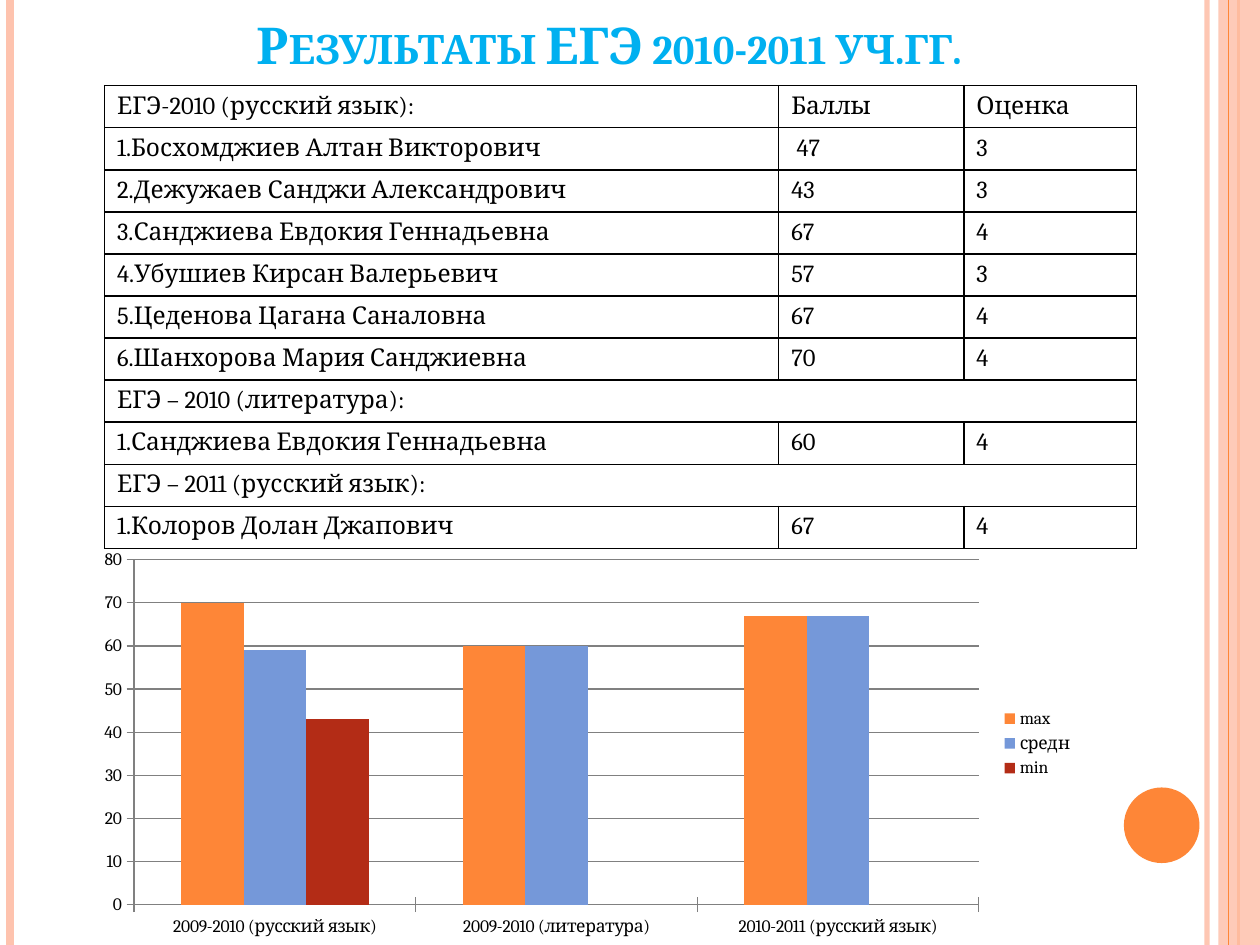
from lxml import etree
from pptx import Presentation, util as u
from pptx.chart.data import CategoryChartData
from pptx.dml.color import RGBColor
from pptx.enum import chart as ch, shapes, text
from pptx.oxml.ns import qn

Inches, Pt = u.Inches, u.Pt
FONT = "Cambria"
COLORS = {
    "orange": "FE8637", "peach": "FEC3AE", "blue": "7598D9", "red": "B32C16",
    "title": "00B0F0", "black": "000000", "grid": "808080",
}
RESULTS = [
    ("ЕГЭ-2010 (русский язык):", "Баллы", "Оценка"),
    ("1.Босхомджиев Алтан Викторович", " 47", "3"),
    ("2.Дежужаев Санджи Александрович", "43", "3"),
    ("3.Санджиева Евдокия Геннадьевна", "67", "4"),
    ("4.Убушиев Кирсан Валерьевич", "57", "3"),
    ("5.Цеденова Цагана Саналовна", "67", "4"),
    ("6.Шанхорова Мария Санджиевна", "70", "4"),
    ("ЕГЭ – 2010 (литература):",),
    ("1.Санджиева Евдокия Геннадьевна", "60", "4"),
    ("ЕГЭ – 2011 (русский язык):",),
    ("1.Колоров Долан Джапович", "67", "4"),
]
CATEGORIES = ["2009-2010 (русский язык)", "2009-2010 (литература)",
              "2010-2011 (русский язык)"]
SERIES = [
    ("max", (70, 60, 67), "orange"),
    ("средн", (59, 60, 67), "blue"),
    ("min", (43, None, None), "red"),
]


def rgb(name):
    return RGBColor.from_string(COLORS[name])


def style_font(font, size, color="black"):
    font.name, font.size = FONT, Pt(size)
    font.color.rgb = rgb(color)


def set_opacity(sp, percent):
    """Apply opacity to the first solid colour of a shape or line."""
    color = sp._element.spPr.find(".//" + qn("a:srgbClr"))
    etree.SubElement(color, qn("a:alpha"), val=str(percent * 1000))


def add_stripe(s, x, top, height, color, width, opacity=100):
    line = s.shapes.add_connector(shapes.MSO_CONNECTOR.STRAIGHT,
                                  x, top, x, top + height)
    line.line.color.rgb = rgb(color)
    line.line.width = Pt(width)
    if opacity < 100:
        set_opacity(line, opacity)
    etree.SubElement(line._element.spPr, qn("a:effectLst"))


def add_filled(s, kind, left, top, width, height, color):
    sp = s.shapes.add_shape(kind, left, top, width, height)
    sp.shadow.inherit = False
    sp.fill.solid()
    sp.fill.fore_color.rgb = rgb(color)
    sp.line.fill.background()
    return sp


def add_decoration(s, left, top, width, height):
    right = left + width
    add_stripe(s, right - Inches(0.42), top, height, "peach", 3, 93)
    add_stripe(s, left + Inches(0.08), top, height, "peach", 4.5)
    add_stripe(s, right - Inches(0.17), top, height, "orange", 1.5)
    band = add_filled(s, shapes.MSO_SHAPE.RECTANGLE, right - Inches(0.33), top,
                      Inches(0.33), height, "peach")
    set_opacity(band, 87)
    add_stripe(s, right - Inches(0.25), top, height, "orange", 0.75)
    add_filled(s, shapes.MSO_SHAPE.OVAL, right - Inches(1.08),
               top + height - Inches(1.25), Inches(0.6), Inches(0.6), "orange")


def add_title(s, left, top, width, height):
    tf = s.shapes.add_textbox(left, top, width, height).text_frame
    tf.word_wrap = True
    tf.vertical_anchor = text.MSO_ANCHOR.BOTTOM
    p = tf.paragraphs[0]
    p.alignment = text.PP_ALIGN.CENTER
    r = p.add_run()
    r.text = "Результаты ЕГЭ 2010-2011 уч.гг."
    style_font(r.font, 29, "title")
    r.font.bold = True
    r._r.get_or_add_rPr().set("cap", "small")


def style_cell(cell):
    """Clear the fill and draw a thin black border on all four sides."""
    tcPr = cell._tc.get_or_add_tcPr()
    for side in ("a:lnL", "a:lnR", "a:lnT", "a:lnB"):
        ln = etree.SubElement(tcPr, qn(side), w=str(Pt(1)))
        fill = etree.SubElement(ln, qn("a:solidFill"))
        etree.SubElement(fill, qn("a:srgbClr"), val=COLORS["black"])
    cell.fill.background()


def add_results_table(s, left, top, width, height):
    table = s.shapes.add_table(len(RESULTS), 3, left, top, width, height).table
    table.first_row = table.horz_banding = False
    widths = Inches(5.35), Inches(1.47)
    for col, w in zip(table.columns, (*widths, width - sum(widths))):
        col.width = w
    for i, values in enumerate(RESULTS):
        table.rows[i].height = height // len(RESULTS)
        for j in range(3):
            style_cell(table.cell(i, j))
        if len(values) == 1:
            table.cell(i, 0).merge(table.cell(i, 2))
        for j, value in enumerate(values):
            r = table.cell(i, j).text_frame.paragraphs[0].add_run()
            r.text = value
            style_font(r.font, 14)


def add_score_chart(s, left, top, width, height):
    data = CategoryChartData()
    data.categories = CATEGORIES
    for name, values, _ in SERIES:
        data.add_series(name, values)
    chart = s.shapes.add_chart(ch.XL_CHART_TYPE.COLUMN_CLUSTERED,
                               left, top, width, height, data).chart
    style_font(chart.font, 10)
    chart.has_title = False
    chart.has_legend = True
    chart.legend.position = ch.XL_LEGEND_POSITION.RIGHT
    chart.legend.include_in_layout = False
    plot = chart.plots[0]
    plot.vary_by_categories = False
    plot.gap_width = 150
    for series, (_, _, color) in zip(plot.series, SERIES):
        series.format.fill.solid()
        series.format.fill.fore_color.rgb = rgb(color)
    chart.value_axis.has_major_gridlines = True
    for axis in (chart.category_axis, chart.value_axis):
        axis.major_tick_mark = ch.XL_TICK_MARK.CROSS
        axis.format.line.color.rgb = rgb("grid")
    chart.value_axis.major_gridlines.format.line.color.rgb = rgb("grid")


def main():
    prs = Presentation()
    prs.slide_width, prs.slide_height = Inches(10), Inches(7.5)
    s = prs.slides.add_slide(prs.slide_layouts[6])
    add_decoration(s, 0, 0, prs.slide_width, prs.slide_height)
    add_title(s, Inches(0.75), 0, Inches(8.17), Inches(0.64))
    add_score_chart(s, Inches(0.67), Inches(4.3), Inches(7.95), Inches(3.2))
    add_results_table(s, Inches(0.83), Inches(0.68), Inches(8.19), Inches(3.57))
    prs.save("out.pptx")


if __name__ == "__main__":
    main()
